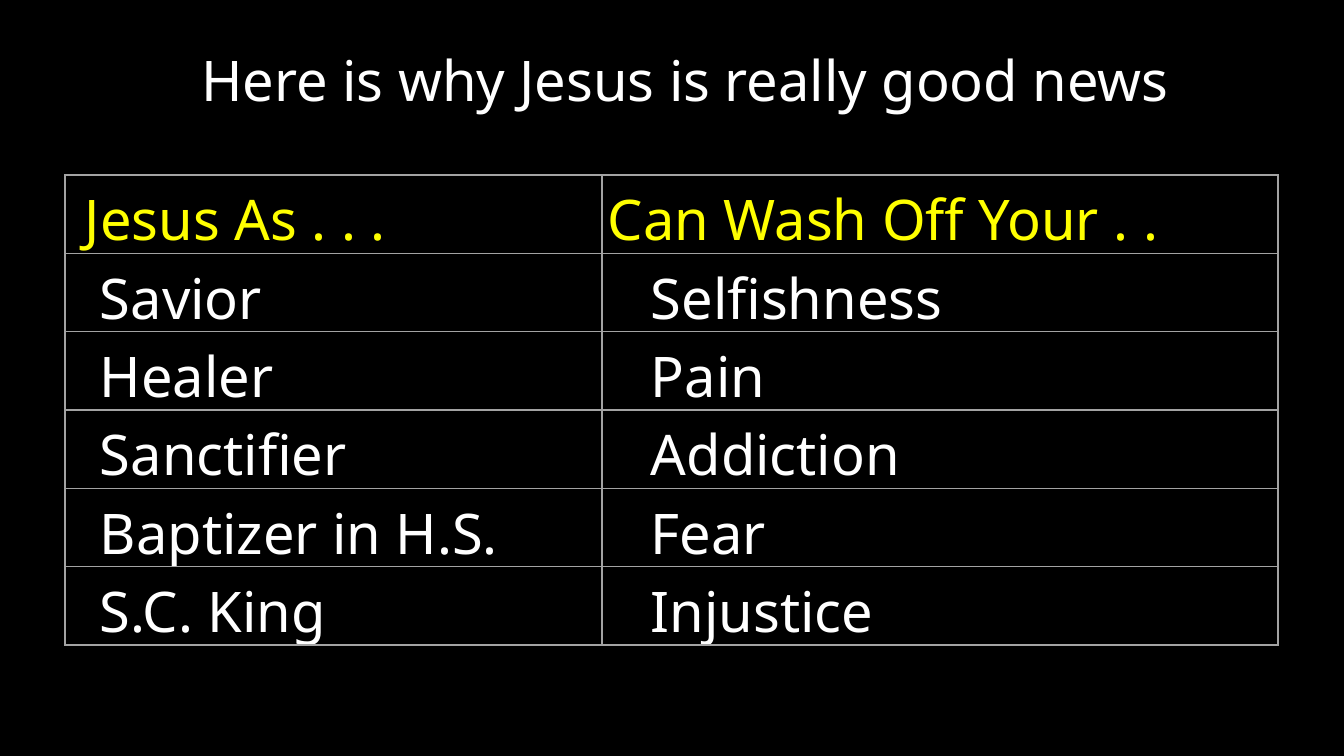
from lxml import etree
from pptx import Presentation
from pptx.dml.color import RGBColor
from pptx.enum.text import MSO_ANCHOR, PP_ALIGN
from pptx.oxml.ns import qn
from pptx.util import Emu, Pt

CENTER = PP_ALIGN.CENTER
TOP = MSO_ANCHOR.TOP
MIDDLE = MSO_ANCHOR.MIDDLE
BLACK = RGBColor(0x00, 0x00, 0x00)
WHITE = RGBColor(0xFF, 0xFF, 0xFF)
YELLOW = RGBColor(0xFF, 0xFF, 0x00)
GREY = RGBColor(0xA3, 0xA3, 0xA3)
FONT = "Noto Sans"
SIZE = Pt(40)

WIDTHS = (537, 676)
HEIGHT = 78
HEAD_PADS = (20, 6)
BODY_PADS = (35, 49)
ROWS = [
    ("Jesus As . . .", "Can Wash Off Your . ."),
    ("Savior", "Selfishness"),
    ("Healer", "Pain"),
    ("Sanctifier", "Addiction"),
    ("Baptizer in H.S.", "Fear"),
    ("S.C. King", "Injustice"),
]


def px(count):
    return Emu(round(count * 12192000 / 1344))


def add_run(para, text, color):
    run = para.add_run()
    run.text = text
    run.font.name = FONT
    run.font.size = SIZE
    run.font.bold = False
    run.font.color.rgb = color


def add_title(slide, text):
    title = slide.shapes.title
    title.left, title.top = px(63), px(40)
    title.width, title.height = px(1244), px(78)
    frame = title.text_frame
    frame.margin_top = frame.margin_bottom = 0
    frame.vertical_anchor = MIDDLE
    para = frame.paragraphs[0]
    para.alignment = CENTER
    add_run(para, text, WHITE)


def add_border(cell):
    props = cell._tc.get_or_add_tcPr()
    for place, side in enumerate(("a:lnL", "a:lnR", "a:lnT", "a:lnB")):
        line = etree.Element(qn(side), w=str(Pt(1)))
        fill = etree.SubElement(line, qn("a:solidFill"))
        etree.SubElement(fill, qn("a:srgbClr"), val=str(GREY))
        props.insert(place, line)


def fill_cell(cell, text, color, pad):
    cell.fill.solid()
    cell.fill.fore_color.rgb = BLACK
    cell.margin_left = px(pad)
    cell.margin_right = cell.margin_top = px(6)
    cell.margin_bottom = px(-4)
    cell.vertical_anchor = TOP
    add_run(cell.text_frame.paragraphs[0], text, color)
    add_border(cell)


def add_grid(slide):
    frame = slide.shapes.add_table(
        len(ROWS), len(WIDTHS), px(65), px(175),
        px(sum(WIDTHS)), px(HEIGHT * len(ROWS)))
    table = frame.table
    for col, width in zip(table.columns, WIDTHS):
        col.width = px(width)
    for i, texts in enumerate(ROWS):
        color, pads = (WHITE, BODY_PADS) if i else (YELLOW, HEAD_PADS)
        for j, text in enumerate(texts):
            fill_cell(table.cell(i, j), text, color, pads[j])


def main():
    deck = Presentation()
    deck.slide_width, deck.slide_height = px(1344), px(756)
    slide = deck.slides.add_slide(deck.slide_layouts[5])
    slide.background.fill.solid()
    slide.background.fill.fore_color.rgb = BLACK
    add_title(slide, "Here is why Jesus is really good news")
    add_grid(slide)
    deck.save("out.pptx")


if __name__ == "__main__":
    main()
